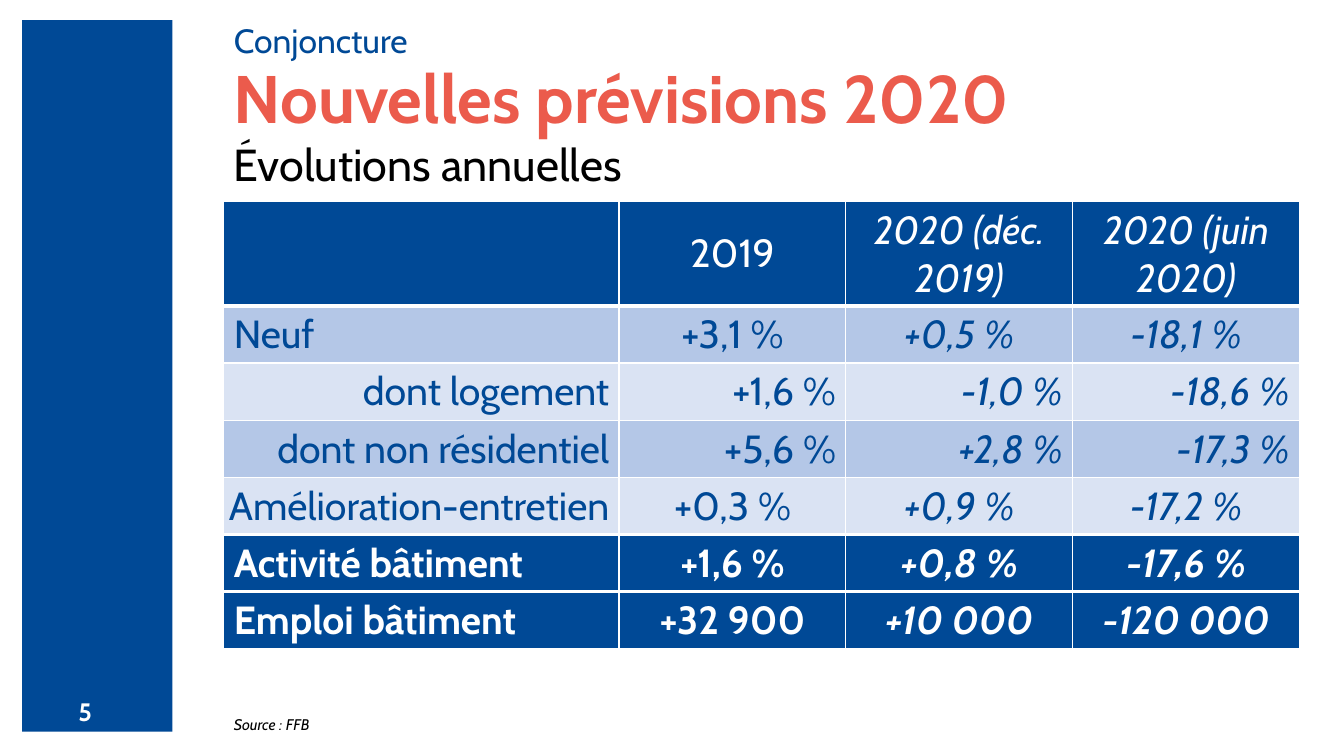
from lxml import etree
from pptx import Presentation
from pptx.dml.color import RGBColor
from pptx.enum.shapes import MSO_SHAPE
from pptx.enum.text import MSO_ANCHOR, PP_ALIGN
from pptx.oxml.ns import qn
from pptx.util import Inches, Pt

LEFT, CENTER, RIGHT = PP_ALIGN.LEFT, PP_ALIGN.CENTER, PP_ALIGN.RIGHT
TOP, MIDDLE, BOTTOM = MSO_ANCHOR.TOP, MSO_ANCHOR.MIDDLE, MSO_ANCHOR.BOTTOM
RECTANGLE = MSO_SHAPE.RECTANGLE

BLUE = RGBColor(0x00, 0x49, 0x96)
CORAL = RGBColor(0xEB, 0x5B, 0x4C)
BLACK = RGBColor(0x00, 0x00, 0x00)
WHITE = RGBColor(0xFF, 0xFF, 0xFF)
MEDIUM_BAND = RGBColor(0xB4, 0xC7, 0xE7)
LIGHT_BAND = RGBColor(0xDA, 0xE3, 0xF3)

FONT = "Cabin"
TEXT_LEFT, TEXT_WIDTH = 2.22, 10.66
COLUMN_WIDTHS = [3.92, 2.25, 2.25, 2.25]
HEADER_HEIGHT, ROW_HEIGHT = 0.97, 0.53
FIRST_ITALIC_COLUMN = 2

FORECASTS = [
    ["", "2019", "2020 (déc. 2019)", "2020 (juin 2020)"],
    ["Neuf", "+3,1 %", "+0,5 %", "-18,1 %"],
    ["dont logement", "+1,6 %", "-1,0 %", "-18,6 %"],
    ["dont non résidentiel", "+5,6 %", "+2,8 %", "-17,3 %"],
    ["Amélioration-entretien", "+0,3 %", "+0,9 %", "-17,2 %"],
    ["Activité bâtiment", "+1,6 %", "+0,8 %", "-17,6 %"],
    ["Emploi bâtiment", "+32 900", "+10 000", "-120 000"],
]
ROW_FILLS = [BLUE, MEDIUM_BAND, LIGHT_BAND, MEDIUM_BAND, LIGHT_BAND, BLUE, BLUE]
TOP_BORDERS = [1, 1, 1, 1, 1, 2.25, 2.25]
BOTTOM_BORDERS = [3, 1, 1, 1, 2.25, 2.25, 1]
DETAIL_ROWS = (2, 3)
TOTAL_ROWS = (5, 6)
IMPROVEMENT_ROW = 4


def write_run(paragraph, text, size, color, bold=False, italic=False):
    run = paragraph.add_run()
    run.text = text
    font = run.font
    font.name, font.size, font.bold, font.italic = FONT, Pt(size), bold, italic
    font.color.rgb = color


def place_text(shape, box, text, size, color, anchor=TOP, spacing=0.9, **style):
    shape.left, shape.top, shape.width, shape.height = map(Inches, box)
    frame = shape.text_frame
    frame.word_wrap = True
    frame.vertical_anchor = anchor
    paragraph = frame.paragraphs[0]
    paragraph.alignment = LEFT
    paragraph.line_spacing = spacing
    write_run(paragraph, text, size, color, **style)


def add_text(slide, box, text, size, color, **style):
    shape = slide.shapes.add_textbox(*map(Inches, box))
    place_text(shape, box, text, size, color, **style)


def add_side_band(slide):
    band = slide.shapes.add_shape(
        RECTANGLE, Inches(0.22), Inches(0.2), Inches(1.49), Inches(7.06))
    band.shadow.inherit = False
    band.fill.solid()
    band.fill.fore_color.rgb = BLUE
    band.line.fill.background()


def set_borders(cell, top, bottom):
    properties = cell._tc.get_or_add_tcPr()
    for tag, width in (("a:lnL", 1), ("a:lnR", 1), ("a:lnT", top), ("a:lnB", bottom)):
        line = etree.SubElement(properties, qn(tag), w=str(Pt(width)))
        fill = etree.SubElement(line, qn("a:solidFill"))
        etree.SubElement(fill, qn("a:srgbClr"), val=str(WHITE))


def cell_alignment(row, column):
    if row in DETAIL_ROWS:
        return RIGHT
    return CENTER if column else LEFT


def format_cell(cell, row, column, text):
    set_borders(cell, TOP_BORDERS[row], BOTTOM_BORDERS[row])
    cell.fill.solid()
    cell.fill.fore_color.rgb = ROW_FILLS[row]
    cell.vertical_anchor = MIDDLE
    if row == IMPROVEMENT_ROW and column == 0:
        cell.margin_left = cell.margin_right = Inches(0.05)
    if text:
        paragraph = cell.text_frame.paragraphs[0]
        paragraph.alignment = cell_alignment(row, column)
        color = WHITE if ROW_FILLS[row] == BLUE else BLUE
        write_run(paragraph, text, 28, color, bold=row in TOTAL_ROWS,
                  italic=column >= FIRST_ITALIC_COLUMN)


def add_forecast_table(slide):
    height = HEADER_HEIGHT + ROW_HEIGHT * (len(FORECASTS) - 1)
    table = slide.shapes.add_table(
        len(FORECASTS), len(COLUMN_WIDTHS), Inches(TEXT_LEFT), Inches(2),
        Inches(sum(COLUMN_WIDTHS)), Inches(height)).table
    for column, width in zip(table.columns, COLUMN_WIDTHS):
        column.width = Inches(width)
    for row, values in enumerate(FORECASTS):
        table.rows[row].height = Inches(ROW_HEIGHT if row else HEADER_HEIGHT)
        for column, text in enumerate(values):
            format_cell(table.cell(row, column), row, column, text)


def main():
    presentation = Presentation()
    presentation.slide_width = Inches(13.33)
    presentation.slide_height = Inches(7.5)
    slide = presentation.slides.add_slide(presentation.slide_layouts[5])

    add_side_band(slide)
    add_text(slide, (0.68, 6.86, 0.56, 0.4), "5", 18, WHITE, spacing=1.0, bold=True)
    place_text(slide.shapes.title, (TEXT_LEFT, 0.26, TEXT_WIDTH, 0.39),
               "Conjoncture", 24, BLUE, anchor=BOTTOM)
    add_text(slide, (TEXT_LEFT, 0.6, TEXT_WIDTH, 0.83),
             "Nouvelles prévisions 2020", 48, CORAL, bold=True)
    add_text(slide, (TEXT_LEFT, 1.37, TEXT_WIDTH, 0.5),
             "Évolutions annuelles", 32, BLACK)
    add_text(slide, (TEXT_LEFT, 7.07, 3.89, 0.24),
             "Source : FFB", 11, BLACK, italic=True)
    add_forecast_table(slide)

    presentation.save("out.pptx")


if __name__ == "__main__":
    main()
